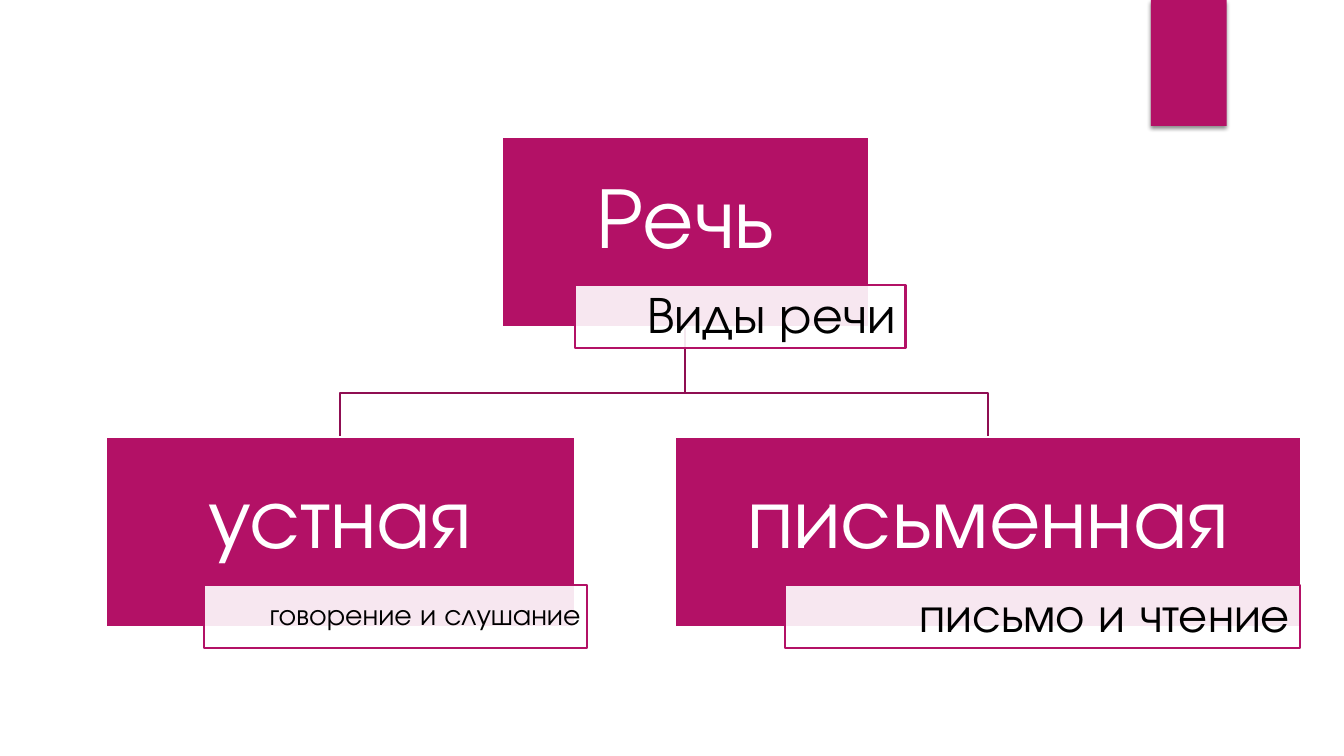
"""Draws the diagram of the kinds of speech: one root and two branches."""
from dataclasses import dataclass

from lxml.etree import SubElement
from pptx import Presentation
from pptx.dml.color import RGBColor
from pptx.enum.shapes import MSO_SHAPE
from pptx.enum.text import MSO_ANCHOR, PP_ALIGN
from pptx.oxml.ns import qn
from pptx.util import Inches, Pt

GRID = Inches(0.1)
FONT = "TeX Gyre Adventor"
MAGENTA, DARK, WHITE, BLACK = "B31166", "8F0E52", "FFFFFF", "000000"
NODE_ROWS, LABEL_ROWS, LABEL_DROP, BEND_ROW = 18.82, 6.27, 14.65, 39


@dataclass(frozen=True)
class Node:
    """A kind of speech and its label, in grid columns and rows."""
    word: str
    column: float
    row: float
    columns: float
    label: str
    label_column: float
    label_columns: float
    label_size: int
    label_inset: float = 1

    @property
    def middle(self) -> float:
        """Gives the column of the node's centre."""
        return self.column + self.columns / 2


ROOT = Node("Речь", 49.78, 13.62, 36.4, "Виды речи", 57.05, 32.76, 37)
BRANCHES = [
    Node("устная", 10.5, 43.37, 46.5, "говорение и слушание", 20.27, 37.92, 21, 0.6),
    Node("письменная", 66.96, 43.37, 62.1, "письмо и чтение", 77.87, 51.1, 35),
]


def cells(count: float) -> int:
    """Turns grid cells into a length."""
    return round(count * GRID)


def rgb(hex_code: str) -> RGBColor:
    """Turns a hex string into a colour."""
    return RGBColor.from_string(hex_code)


def write(shape, text: str, *, size: float, color: str, align=PP_ALIGN.CENTER,
          insets: tuple = (0.4, 0.4, 0.4, 2.7)) -> None:
    """Writes one formatted paragraph in a shape."""
    frame = shape.text_frame
    frame.word_wrap = True
    frame.vertical_anchor = MSO_ANCHOR.MIDDLE
    (frame.margin_left, frame.margin_top,
     frame.margin_right, frame.margin_bottom) = map(cells, insets)
    paragraph = frame.paragraphs[0]
    paragraph.alignment = align
    paragraph.line_spacing = 0.9
    run = paragraph.add_run()
    run.text = text
    run.font.name, run.font.size = FONT, Pt(size)
    run.font.color.rgb = rgb(color)


def add_block(slide, box: tuple, fill: str, line: str | None = None,
              opacity: int = 100):
    """Adds a rectangle given as column, row, columns and rows."""
    block = slide.shapes.add_shape(MSO_SHAPE.RECTANGLE, *map(cells, box))
    block.shadow.inherit = False
    block.fill.solid()
    block.fill.fore_color.rgb = rgb(fill)
    if opacity < 100:
        color = block.fill._xPr.find(qn("a:solidFill"))[0]
        SubElement(color, qn("a:alpha"), val=str(opacity * 1000))
    if line:
        block.line.color.rgb = rgb(line)
        block.line.width = Pt(1.5)
    else:
        block.line.fill.background()
    return block


def add_ribbon(slide) -> None:
    """Adds the ribbon at the top edge with its soft shadow."""
    ribbon = add_block(slide, (114.15, 0, 7.5, 12.5), MAGENTA)
    effects = ribbon._element.spPr.find(qn("a:effectLst"))
    shadow = SubElement(effects, qn("a:outerShdw"), blurRad=str(Pt(3)),
                        dist=str(Pt(2)), dir="5400000", rotWithShape="0")
    color = SubElement(shadow, qn("a:srgbClr"), val=BLACK)
    SubElement(color, qn("a:alpha"), val="45000")


def add_branch_line(slide, branch: Node) -> None:
    """Adds the bent line from the root down to a branch."""
    start = ROOT.row + NODE_ROWS
    builder = slide.shapes.build_freeform(cells(ROOT.middle), cells(start))
    corners = [(ROOT.middle, BEND_ROW), (branch.middle, BEND_ROW),
               (branch.middle, branch.row)]
    builder.add_line_segments([(cells(x), cells(y)) for x, y in corners], close=False)
    bend = builder.convert_to_shape()
    bend.shadow.inherit = False
    bend.fill.background()
    bend.line.color.rgb = rgb(DARK)
    bend.line.width = Pt(1.5)


def add_node(slide, node: Node) -> None:
    """Adds a node with the label over its lower edge."""
    block = add_block(slide, (node.column, node.row, node.columns, NODE_ROWS),
                      MAGENTA, WHITE)
    write(block, node.word, size=62, color=WHITE)
    label = add_block(slide, (node.label_column, node.row + LABEL_DROP,
                              node.label_columns, LABEL_ROWS), WHITE, MAGENTA, 90)
    write(label, node.label, size=node.label_size, color=BLACK, align=PP_ALIGN.RIGHT,
          insets=(node.label_inset, 0.2, node.label_inset, 0.2))


def main() -> None:
    """Builds and saves the slide."""
    deck = Presentation()
    deck.slide_width, deck.slide_height = Inches(13.33), Inches(7.5)
    slide = deck.slides.add_slide(deck.slide_layouts[6])
    add_ribbon(slide)
    for branch in BRANCHES:
        add_branch_line(slide, branch)
    for node in (ROOT, *BRANCHES):
        add_node(slide, node)
    deck.save("out.pptx")


if __name__ == "__main__":
    main()
